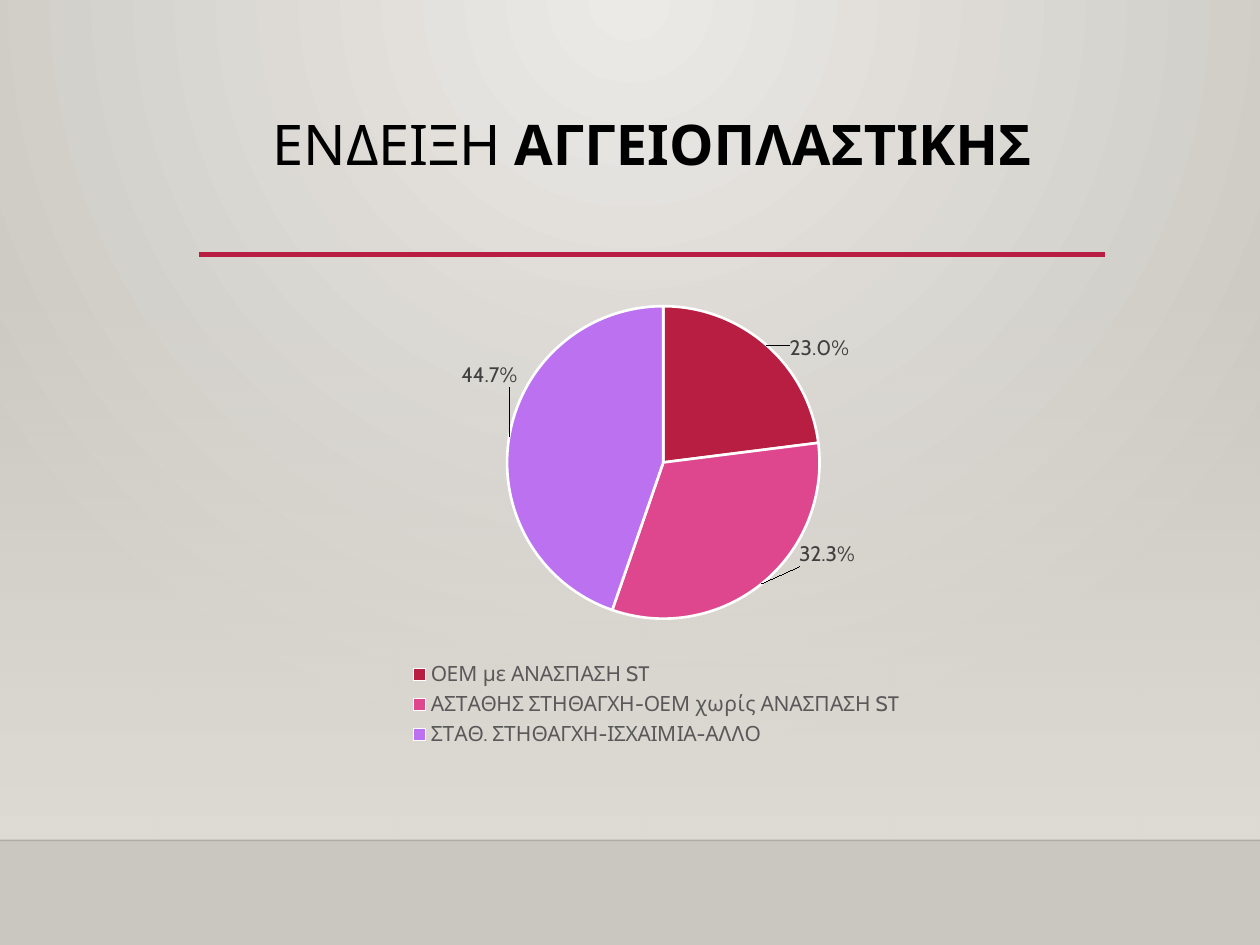
from dataclasses import dataclass

from lxml.etree import SubElement
from pptx import Presentation
from pptx.chart.data import CategoryChartData
from pptx.dml.color import RGBColor
from pptx.enum.chart import XL_CHART_TYPE, XL_LABEL_POSITION, XL_LEGEND_POSITION
from pptx.enum.shapes import MSO_CONNECTOR, MSO_SHAPE
from pptx.enum.text import MSO_ANCHOR, PP_ALIGN
from pptx.oxml import parse_xml
from pptx.oxml.ns import nsdecls, qn
from pptx.util import Inches, Pt


@dataclass(frozen=True)
class Theme:
    """Colours, font and type sizes of the slide."""
    font: str = "Cabin"
    title_size: int = 32
    chart_size: int = 12
    black: str = "000000"
    white: str = "FFFFFF"
    label: str = "404040"
    legend: str = "595959"
    accent: str = "B71E42"
    center: str = "ECEAE7"
    edge: str = "CAC7C1"
    wall: str = "DFDBD5"
    slices: tuple = ("B71E42", "DE478E", "BC72F0")


THEME = Theme()
LEFT, WIDTH = 1.58, 7.19
FLOOR = 6.67
INDICATIONS = (
    ("ΟΕΜ με ΑΝΑΣΠΑΣΗ ST", 0.23, (0.02, 0.045)),
    ("ΑΣΤΑΘΗΣ ΣΤΗΘΑΓΧΗ-ΟΕΜ χωρίς ΑΝΑΣΠΑΣΗ ST", 0.323, (0.036, -0.1)),
    ("ΣΤΑΘ. ΣΤΗΘΑΓΧΗ-ΙΣΧΑΙΜΙΑ-ΑΛΛΟ", 0.447, (0.017, -0.1)),
)


def rgb(color):
    """Return a colour object for a hex string."""
    return RGBColor.from_string(color)


def set_alpha(element, percent):
    """Give the first colour inside an element an opacity."""
    color = next(element.iter(qn("a:srgbClr")))
    SubElement(color, qn("a:alpha")).set("val", str(percent * 1000))


def set_gradient(fill, first, last):
    """Apply a two-colour gradient running downwards."""
    fill.gradient()
    fill.gradient_angle = 270
    for stop, color in zip(fill.gradient_stops, (first, last)):
        stop.color.rgb = rgb(color)


def set_font(font, size, color):
    """Apply the theme font with a size and colour."""
    font.name = THEME.font
    font.size = Pt(size)
    font.color.rgb = rgb(color)


def paint_background(slide):
    """Fill the background with a glow from the top centre."""
    set_gradient(slide.background.fill, THEME.center, THEME.edge)
    linear = next(slide._element.iter(qn("a:lin")))
    glow = parse_xml(
        f'<a:path {nsdecls("a")} path="circle">'
        '<a:fillToRect l="43000" t="0" r="43000" b="100000"/></a:path>'
    )
    linear.getparent().replace(linear, glow)


def add_wall(slide):
    """Add the wall panel that fades in towards the floor."""
    wall = slide.shapes.add_shape(
        MSO_SHAPE.RECTANGLE, 0, Inches(2.2), Inches(10), Inches(FLOOR - 2.2)
    )
    wall.shadow.inherit = False
    wall.line.fill.background()
    set_gradient(wall.fill, THEME.wall, THEME.wall)
    set_alpha(wall._element.spPr, 0)


def add_rule(slide, left, right, top, color, width):
    """Add a horizontal line and return it."""
    rule = slide.shapes.add_connector(
        MSO_CONNECTOR.STRAIGHT, Inches(left), Inches(top), Inches(right), Inches(top)
    )
    rule.line.color.rgb = rgb(color)
    rule.line.width = Pt(width)
    SubElement(rule._element.spPr, qn("a:effectLst"))
    return rule


def add_title(slide, plain, strong):
    """Add the centred title with its second part in bold."""
    box = slide.shapes.add_textbox(
        Inches(LEFT), Inches(0.88), Inches(WIDTH), Inches(1.15)
    )
    frame = box.text_frame
    frame.word_wrap = True
    frame.vertical_anchor = MSO_ANCHOR.TOP
    paragraph = frame.paragraphs[0]
    paragraph.alignment = PP_ALIGN.CENTER
    paragraph.line_spacing = 0.9
    set_font(paragraph.font, THEME.title_size, THEME.black)
    paragraph.add_run().text = plain
    run = paragraph.add_run()
    run.text = strong
    run.font.bold = True


def set_layout(parent, index, **settings):
    """Place a chart part by hand, replacing its automatic layout."""
    for old in parent.findall(qn("c:layout")):
        parent.remove(old)
    layout = parse_xml(f'<c:layout {nsdecls("c")}><c:manualLayout/></c:layout>')
    for name, value in settings.items():
        SubElement(layout[0], qn(f"c:{name}")).set("val", str(value))
    parent.insert(index, layout)


def style_slice(point, color, offset):
    """Colour one slice and move its value label."""
    point.format.fill.solid()
    point.format.fill.fore_color.rgb = rgb(color)
    point.format.line.color.rgb = rgb(THEME.white)
    point.format.line.width = Pt(1.5)
    label = point.data_label
    set_font(label.font, THEME.chart_size, THEME.label)
    label.position = XL_LABEL_POSITION.OUTSIDE_END
    set_layout(label._get_or_add_dLbl(), 1, x=offset[0], y=offset[1])


def add_pie(slide):
    """Add the pie chart of indications with its legend."""
    data = CategoryChartData(number_format="0.0%")
    data.categories = [name for name, _, _ in INDICATIONS]
    data.add_series("Series 1", [share for _, share, _ in INDICATIONS])
    chart = slide.shapes.add_chart(
        XL_CHART_TYPE.PIE, Inches(LEFT), Inches(2.2), Inches(WIDTH), Inches(3.77), data
    ).chart
    chart.has_title = False
    set_font(chart.font, THEME.chart_size, THEME.black)
    chart.has_legend = True
    legend = chart.legend
    legend.position = XL_LEGEND_POSITION.BOTTOM
    legend.include_in_layout = False
    set_font(legend.font, THEME.chart_size, THEME.legend)
    set_layout(legend._element, 1, xMode="edge", yMode="edge",
               x=0.22, y=0.8, w=0.57, h=0.2)
    plot_area = next(chart._chartSpace.iter(qn("c:plotArea")))
    set_layout(plot_area, 0, layoutTarget="inner", xMode="edge", yMode="edge",
               x=0.34, y=0.06, w=0.345, h=0.66)
    plot = chart.plots[0]
    plot.vary_by_categories = True
    series = plot.series[0]
    for index, (_, _, offset) in enumerate(INDICATIONS):
        style_slice(series.points[index], THEME.slices[index], offset)


def main():
    """Build the slide and save it."""
    presentation = Presentation()
    presentation.slide_width = Inches(10)
    presentation.slide_height = Inches(7.5)
    slide = presentation.slides.add_slide(presentation.slide_layouts[6])
    paint_background(slide)
    add_wall(slide)
    floor_line = add_rule(slide, 0, 10, FLOOR, THEME.black, 1)
    set_alpha(floor_line._element.spPr, 20)
    add_rule(slide, LEFT, LEFT + WIDTH, 2.02, THEME.accent, 2.5)
    add_title(slide, "ΕΝΔΕΙΞΗ ", "ΑΓΓΕΙΟΠΛΑΣΤΙΚΗΣ")
    add_pie(slide)
    presentation.save("out.pptx")


if __name__ == "__main__":
    main()
